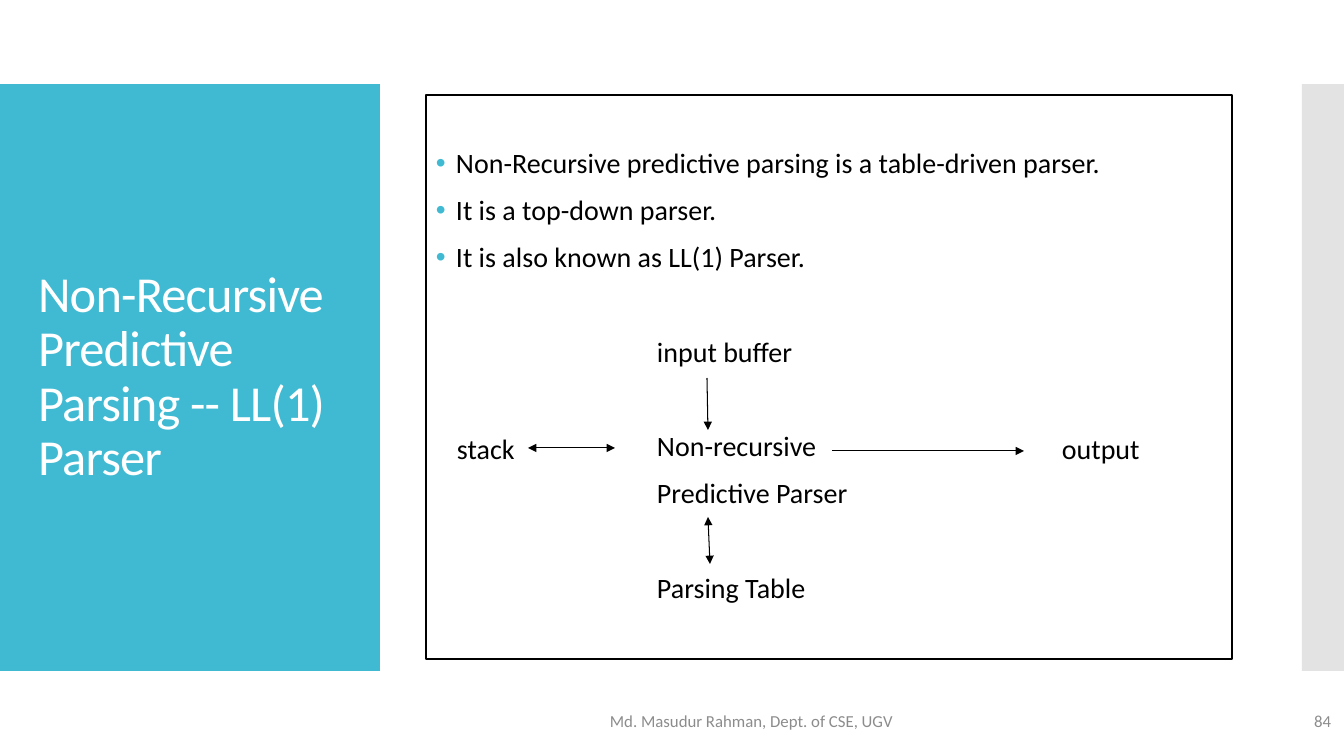
from lxml import etree
from pptx import Presentation
from pptx.dml.color import RGBColor
from pptx.enum.shapes import MSO_CONNECTOR, MSO_SHAPE
from pptx.enum.text import MSO_ANCHOR, MSO_AUTO_SIZE, PP_ALIGN
from pptx.oxml.ns import qn
from pptx.util import Pt

RECTANGLE = MSO_SHAPE.RECTANGLE
STRAIGHT = MSO_CONNECTOR.STRAIGHT
MIDDLE = MSO_ANCHOR.MIDDLE
NO_AUTOFIT = MSO_AUTO_SIZE.NONE
LEFT, CENTER, RIGHT = PP_ALIGN.LEFT, PP_ALIGN.CENTER, PP_ALIGN.RIGHT

TEAL = RGBColor(0x40, 0xBA, 0xD2)
SIDE_GRAY = RGBColor(0xE3, 0xE3, 0xE3)
FOOTER_GRAY = RGBColor(0x8C, 0x8C, 0x8C)
WHITE = RGBColor(0xFF, 0xFF, 0xFF)
BLACK = RGBColor(0, 0, 0)

PX = 914400 / 100.8
INSET = 10
BULLET_INDENT = 20
PARSER_COLUMN = 221
ROW_GAP = 12
EMPTY_ROW = 34


def px(*lengths):
    return [round(length * PX) for length in lengths]


def write(para, text, size, color):
    span = para.add_run()
    span.text = text
    span.font.name = "Calibri"
    span.font.size = Pt(size)
    span.font.color.rgb = color
    return span


deck = Presentation()
deck.slide_width, deck.slide_height = px(1344, 756)
page = deck.slides.add_slide(deck.slide_layouts[5])
title = page.shapes.title

# Side panels, behind the title
for left, width, color in [(0, 380, TEAL), (1302, 42, SIDE_GRAY)]:
    panel = page.shapes.add_shape(RECTANGLE, *px(left, 84, width, 587))
    panel.shadow.inherit = False
    panel.fill.solid()
    panel.fill.fore_color.rgb = color
    panel.line.fill.background()
    title.element.addprevious(panel.element)

title.left, title.top, title.width, title.height = px(28, 124, 325, 507)
frame = title.text_frame
frame.word_wrap = True
frame.auto_size = NO_AUTOFIT
frame.vertical_anchor = MIDDLE
para = frame.paragraphs[0]
para.alignment = LEFT
para.line_spacing = 0.9
span = write(para, "Non-Recursive Predictive Parsing -- LL(1) Parser", 36, WHITE)
span.font._element.set("spc", "-60")

# Body: bullets, then the middle column of the parser diagram
body = page.shapes.add_shape(RECTANGLE, *px(426, 95, 806, 564))
body.shadow.inherit = False
body.fill.solid()
body.fill.fore_color.rgb = WHITE
body.line.color.rgb = BLACK
body.line.width = Pt(0.85)
frame = body.text_frame
frame.word_wrap = True
frame.vertical_anchor = MIDDLE
frame.margin_left, frame.margin_right = px(INSET, INSET)

# Each row: text, whether it has a bullet, empty rows above
rows = [
    ("Non-Recursive predictive parsing is a table-driven parser.", True, 0),
    ("It is a top-down parser.", True, 0),
    ("It is also known as LL(1) Parser.", True, 0),
    ("input buffer", False, 1),
    ("Non-recursive", False, 1),
    ("Predictive Parser", False, 0),
    ("Parsing Table", False, 1),
]
for index, (text, has_bullet, empty_rows) in enumerate(rows):
    para = frame.paragraphs[0] if index == 0 else frame.add_paragraph()
    para.alignment = LEFT
    para.line_spacing = 0.9
    para.space_before = Pt(ROW_GAP + EMPTY_ROW * empty_rows if index else 0)
    properties = para._p.get_or_add_pPr()
    margin, indent = px(PARSER_COLUMN, 0)
    if has_bullet:
        margin, indent = px(BULLET_INDENT, -BULLET_INDENT)
        color = etree.SubElement(properties, qn("a:buClr"))
        etree.SubElement(color, qn("a:srgbClr"), val=str(TEAL))
        etree.SubElement(properties, qn("a:buFont"), typeface="Arial")
        etree.SubElement(properties, qn("a:buChar"), char="•")
    properties.set("marL", str(margin))
    properties.set("indent", str(indent))
    write(para, text, 20, BLACK)

# Arrows: start, end, whether both ends have a head
arrows = [
    ((707, 378), (708, 430), False),
    ((528, 448), (615, 448), True),
    ((832, 451), (1024, 451), False),
    ((708, 517), (710, 564), True),
]
for start, end, both_ways in arrows:
    arrow = page.shapes.add_connector(STRAIGHT, *px(*start, *end))
    arrow.line.color.rgb = BLACK
    arrow.line.width = Pt(0.75)
    line = arrow.line._get_or_add_ln()
    for tag in ["a:headEnd", "a:tailEnd"] if both_ways else ["a:tailEnd"]:
        etree.SubElement(line, qn(tag), type="triangle")
    etree.SubElement(arrow.element.spPr, qn("a:effectLst"))

# Diagram labels beside the parser, then the footer
captions = [
    ("stack", 447, 428, 80, LEFT, 20, BLACK),
    ("output", 1052, 428, 120, LEFT, 20, BLACK),
    ("Md. Masudur Rahman, Dept. of CSE, UGV", 426, 701, 651, CENTER, 12, FOOTER_GRAY),
    ("84", 1172, 701, 169, RIGHT, 12, FOOTER_GRAY),
]
for text, left, top, width, alignment, size, color in captions:
    box = page.shapes.add_textbox(*px(left, top, width, 40))
    frame = box.text_frame
    frame.word_wrap = True
    frame.vertical_anchor = MIDDLE
    frame.paragraphs[0].alignment = alignment
    write(frame.paragraphs[0], text, size, color)

deck.save("out.pptx")
